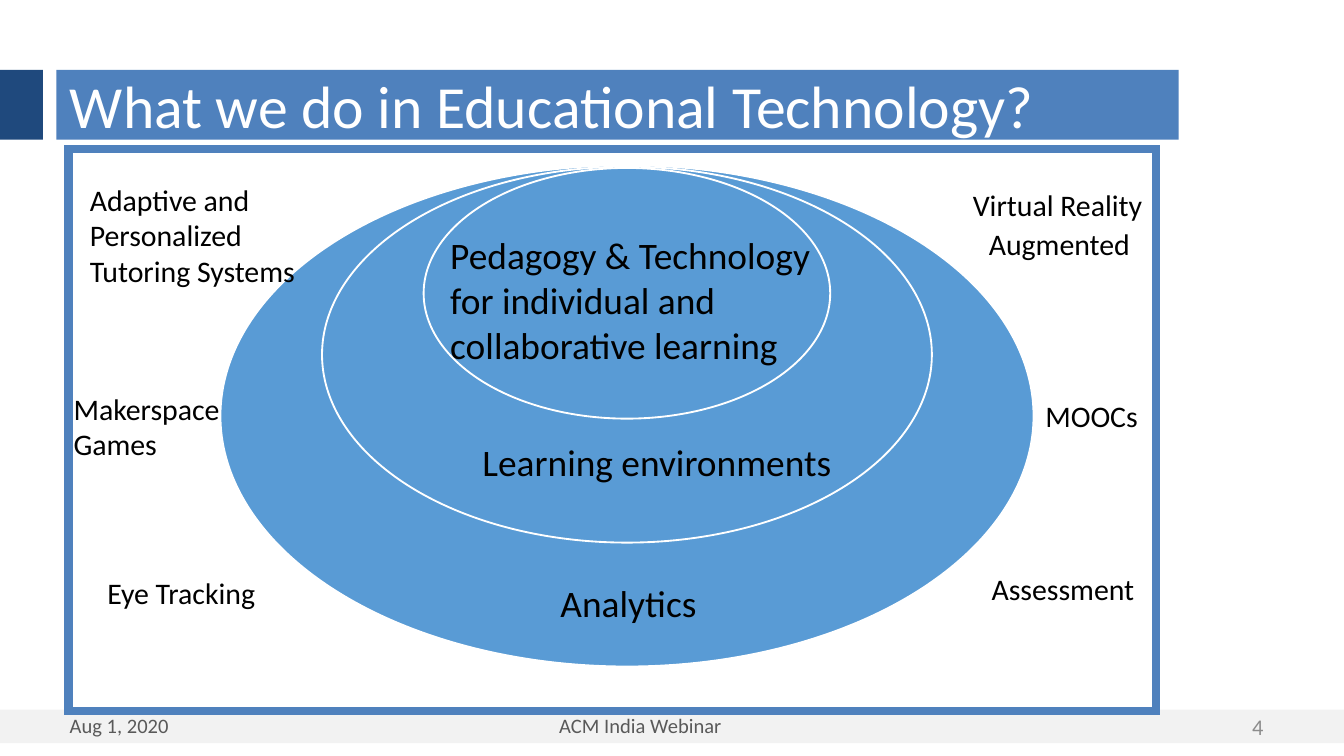
from lxml.etree import SubElement
from pptx import Presentation
from pptx.dml.color import RGBColor
from pptx.enum.shapes import MSO_SHAPE
from pptx.enum.text import MSO_ANCHOR, MSO_AUTO_SIZE, PP_ALIGN
from pptx.oxml.ns import qn
from pptx.util import Inches, Pt

BLUE, NAVY, SKY = "4F81BD", "1F497D", "599BD5"
WHITE, BLACK, GREY = "FFFFFF", "000000", "595959"


def paint(color_format, value):
    """Set a fill, line or font colour from a hex string."""
    color_format.rgb = RGBColor.from_string(value)


def add_run(paragraph, text, size, color):
    """Add one formatted run to a paragraph."""
    run = paragraph.add_run()
    run.text = text
    run.font.name = "Calibri"
    run.font.size = Pt(size)
    paint(run.font.color, color)


def add_figure(slide, kind, box, fill=None, line=None, weight=1):
    """Add a flat preset shape with sharp corners in a box of inches."""
    figure = slide.shapes.add_shape(kind, *map(Inches, box))
    figure.shadow.inherit = False
    if fill:
        figure.fill.solid()
        paint(figure.fill.fore_color, fill)
    else:
        figure.fill.background()
    if line:
        paint(figure.line.color, line)
        figure.line.width = Pt(weight)
        SubElement(figure.line._get_or_add_ln(), qn("a:miter"), lim="800000")
    else:
        figure.line.fill.background()


def add_text(slide, box, lines, size, color=BLACK, align=PP_ALIGN.LEFT,
             insets=(0.1, 0.05), wrap=True, anchor=MSO_ANCHOR.TOP):
    """Add a text box with one paragraph per line."""
    frame = slide.shapes.add_textbox(*map(Inches, box)).text_frame
    frame.word_wrap = wrap
    frame.auto_size = MSO_AUTO_SIZE.NONE if wrap else MSO_AUTO_SIZE.SHAPE_TO_FIT_TEXT
    frame.vertical_anchor = anchor
    frame.margin_left = frame.margin_right = Inches(insets[0])
    frame.margin_top = frame.margin_bottom = Inches(insets[1])
    for index, line in enumerate(lines):
        paragraph = frame.add_paragraph() if index else frame.paragraphs[0]
        paragraph.alignment = align
        add_run(paragraph, line, size, color)


def build_heading(slide, box):
    """Place the title bar and the accent block at its left."""
    left, top, width, height = box
    add_figure(slide, MSO_SHAPE.RECTANGLE, (0, top, left - 0.1, height), NAVY)
    title = slide.shapes.title
    title.left, title.top, title.width, title.height = map(Inches, box)
    title.fill.solid()
    paint(title.fill.fore_color, BLUE)
    frame = title.text_frame
    frame.word_wrap = True
    frame.auto_size = MSO_AUTO_SIZE.NONE
    frame.vertical_anchor = MSO_ANCHOR.MIDDLE
    frame.margin_top = frame.margin_bottom = 0
    frame.paragraphs[0].alignment = PP_ALIGN.LEFT
    add_run(frame.paragraphs[0], "What we do in Educational Technology?", 32, WHITE)


def build_footer(slide, box):
    """Place the footer band with date, event and page number."""
    left, top, width, height = box
    add_figure(slide, MSO_SHAPE.RECTANGLE, box, "F2F2F2")
    text_top = top - 0.02
    add_text(slide, (left + 2.42, text_top, 4.69, 0.24), ["ACM India Webinar"],
             11, GREY, PP_ALIGN.CENTER)
    add_text(slide, (left + 0.42, text_top, 1.42, 0.24), ["Aug 1, 2020"], 11, GREY)
    add_text(slide, (left + 8.88, text_top, 0.62, 0.3), ["4"], 12, "8C8C8C",
             PP_ALIGN.RIGHT, anchor=MSO_ANCHOR.MIDDLE)


def build_layers(slide, box):
    """Place nested ellipses that share their top."""
    left, top, width, height = box
    for index, share in enumerate((1, 0.75, 0.5)):
        layer = (left + width * (1 - share) / 2, top + 0.01 * index,
                 width * share, height * share)
        add_figure(slide, MSO_SHAPE.OVAL, layer, SKY, WHITE)


def build_layer_names(slide, box):
    """Name each layer inside the ellipses."""
    left, top = box[:2]
    names = [
        ("Analytics", 2.46, 3.05, 1.65, 0.22),
        ("Learning environments", 1.88, 2, 2.84, 0.22),
        ("Pedagogy & Technology for individual and collaborative learning",
         1.64, 0.46, 3.05, 0.7),
    ]
    for name, x, y, width, height in names:
        add_text(slide, (left + x, top + y, width, height), [name], 20,
                 insets=(0.07, 0.04))


def build_topics(slide, box):
    """Place the frame and the topics around the ellipses."""
    left, top = box[:2]
    add_figure(slide, MSO_SHAPE.RECTANGLE, box, line=BLUE, weight=4.5)
    topics = [
        (["Virtual Reality"], 6.63, 0.23, 1.48),
        (["Augmented"], 6.75, 0.52, 1.26),
        (["MOOCs"], 7.17, 1.8, 0.9),
        (["Assessment"], 6.77, 3.09, 1.28),
        (["Adaptive and", "Personalized", "Tutoring Systems"], 0.06, 0.19, 1.75),
        (["Makerspace"], -0.06, 1.75, 1.3),
        (["Games"], -0.06, 2.01, 0.83),
        (["Eye Tracking"], 0.19, 3.12, 1.31),
    ]
    for lines, x, y, width in topics:
        height = 0.1 + 0.27 * len(lines)
        add_text(slide, (left + x, top + y, width, height), lines, 16, wrap=False)


def main():
    """Build and save the slide."""
    deck = Presentation()
    deck.slide_width = Inches(10)
    deck.slide_height = Inches(10 * 9 / 16)
    slide = deck.slides.add_slide(deck.slide_layouts[5])
    ellipses = (1.64, 1.23, 6.05, 3.73)
    build_footer(slide, (0, 5.28, 10, 0.25))
    build_heading(slide, (0.42, 0.52, 8.35, 0.52))
    build_layers(slide, ellipses)
    build_topics(slide, (0.51, 1.11, 8.09, 4.18))
    build_layer_names(slide, ellipses)
    deck.save("out.pptx")


if __name__ == "__main__":
    main()
